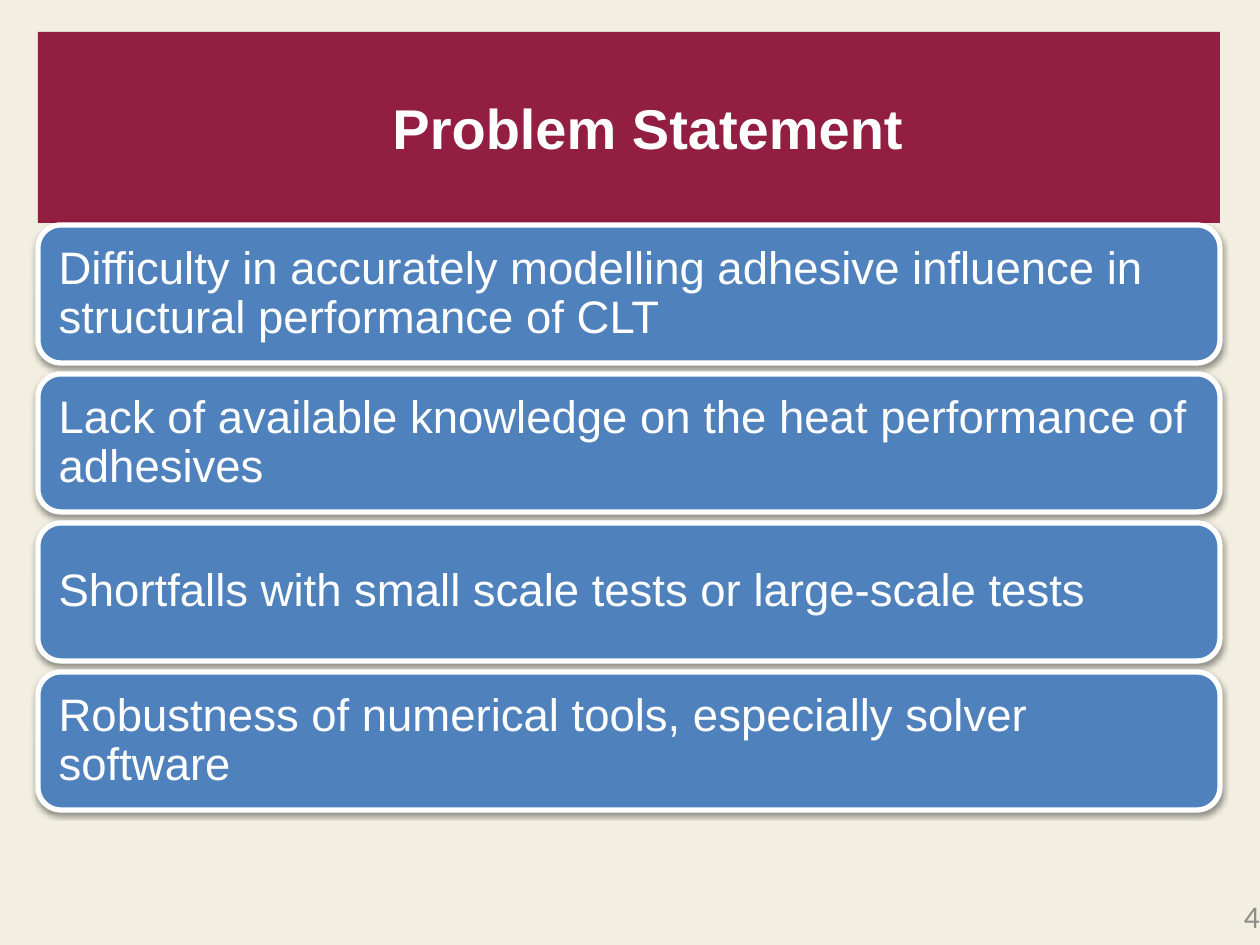
from dataclasses import dataclass

from lxml.etree import SubElement
from pptx import Presentation
from pptx.dml.color import RGBColor
from pptx.enum.shapes import MSO_SHAPE
from pptx.enum.text import MSO_ANCHOR, MSO_AUTO_SIZE, PP_ALIGN
from pptx.oxml.ns import qn
from pptx.util import Pt

# Content
TITLE = "Problem Statement"
POINTS = [
    "Difficulty in accurately modelling adhesive influence in structural performance of CLT",
    "Lack of available knowledge on the heat performance of adhesives",
    "Shortfalls with small scale tests or large-scale tests",
    "Robustness of numerical tools, especially solver software",
]
NUMBER = "4"


@dataclass(frozen=True)
class Theme:
    back: str = "F2EFE0"
    band: str = "921E42"
    card: str = "4F81BD"
    white: str = "FFFFFF"
    grey: str = "8C8C8C"
    font: str = "Arial"
    foot: str = "Calibri"
    head_size: int = 32
    body_size: int = 26
    foot_size: int = 18


# Layout in px, 126 to the inch
WIDE, HIGH = 1260, 945
LEFT, SPAN = 38, 1182
TOP, TALL, GAP = 225, 138, 11
THEME = Theme()


def px(n):
    return round(n * 914400 / 126)


def place(shape, *box):
    shape.left, shape.top, shape.width, shape.height = map(px, box)


def paint(fill, color):
    fill.solid()
    fill.fore_color.rgb = RGBColor.from_string(color)


def write(shape, text, name, size, color, align, pad=(0, 0, 0, 0), bold=False):
    frame = shape.text_frame
    frame.text = text
    frame.word_wrap = True
    frame.auto_size = MSO_AUTO_SIZE.NONE
    (frame.margin_left, frame.margin_top,
     frame.margin_right, frame.margin_bottom) = map(px, pad)
    para = frame.paragraphs[0]
    para.alignment = align
    for run in para.runs:
        font = run.font
        font.name, font.size, font.bold = name, Pt(size), bold
        font.color.rgb = RGBColor.from_string(color)
    return frame


def shade(shape):
    shape.shadow.inherit = False
    effects = shape._element.spPr.find(qn("a:effectLst"))
    outer = SubElement(effects, qn("a:outerShdw"), blurRad=str(Pt(3.1)),
                       dist=str(Pt(1.6)), dir="5400000", rotWithShape="0")
    color = SubElement(outer, qn("a:srgbClr"), val="000000")
    SubElement(color, qn("a:alpha"), val="38000")


def add_card(slide, row, text):
    top = TOP + row * (TALL + GAP)
    card = slide.shapes.add_shape(
        MSO_SHAPE.ROUNDED_RECTANGLE, *map(px, (LEFT, top, SPAN, TALL)))
    paint(card.fill, THEME.card)
    paint(card.line.fill, THEME.white)
    card.line.width = Pt(3)
    shade(card)
    frame = write(card, text, THEME.font, THEME.body_size, THEME.white,
                  PP_ALIGN.LEFT, (14, 7, 14, 7))
    frame.vertical_anchor = MSO_ANCHOR.MIDDLE
    frame.paragraphs[0].line_spacing = 0.9


def main():
    deck = Presentation()
    deck.slide_width, deck.slide_height = px(WIDE), px(HIGH)
    slide = deck.slides.add_slide(deck.slide_layouts[5])
    paint(slide.background.fill, THEME.back)

    # Title band
    title = slide.shapes.title
    place(title, LEFT, 32, SPAN, 191)
    paint(title.fill, THEME.band)
    frame = write(title, TITLE, THEME.font, THEME.head_size, THEME.white,
                  PP_ALIGN.CENTER, (38, 61, 0, 0), bold=True)
    frame.vertical_anchor = MSO_ANCHOR.TOP

    # Slide number
    foot = slide.shapes.add_textbox(*map(px, (970, 897, 290, 48)))
    write(foot, NUMBER, THEME.foot, THEME.foot_size, THEME.grey, PP_ALIGN.RIGHT)

    # Stacked cards
    for row, text in enumerate(POINTS):
        add_card(slide, row, text)

    deck.save("out.pptx")


if __name__ == "__main__":
    main()
